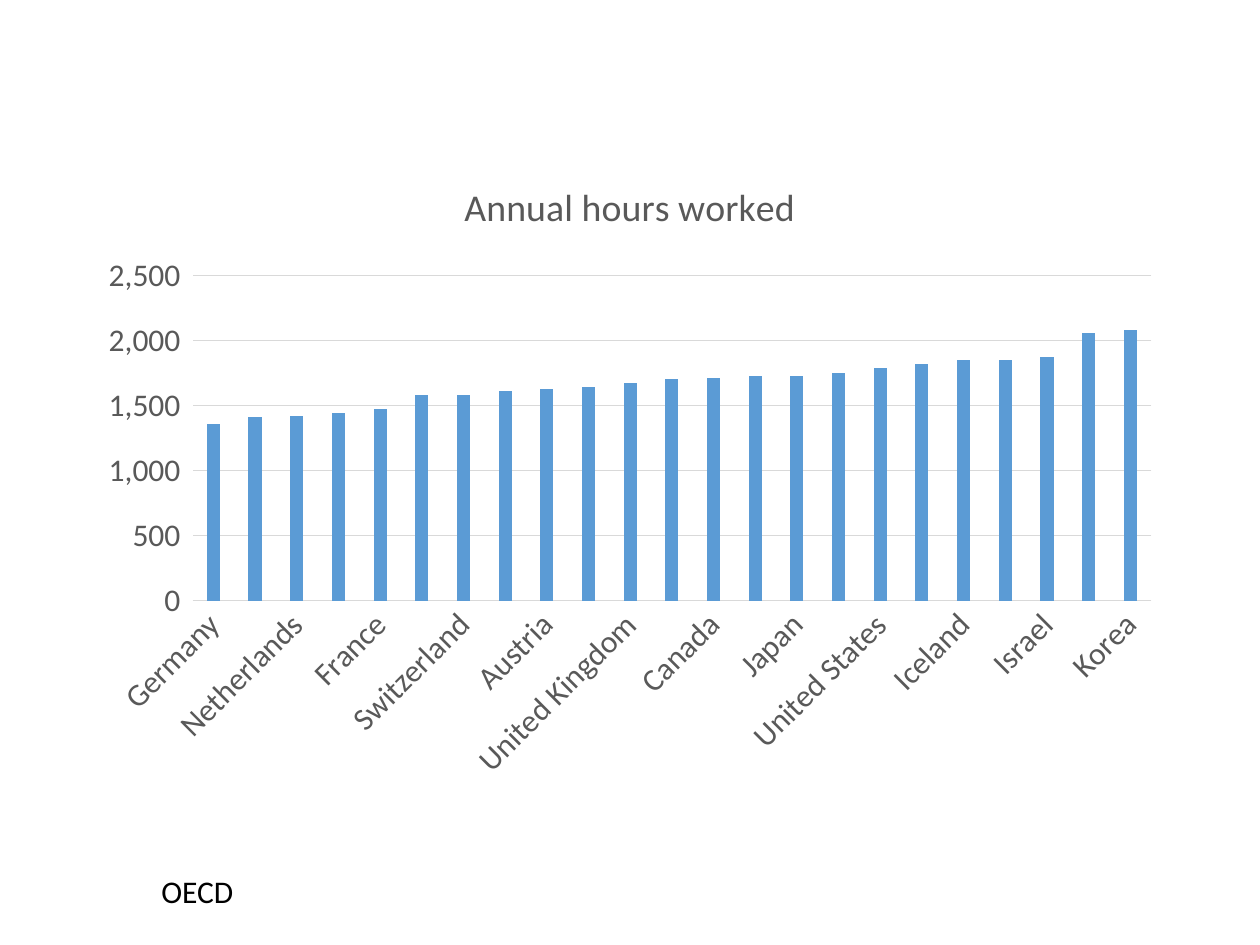
from pptx import Presentation
from pptx.chart.data import CategoryChartData
from pptx.dml.color import RGBColor
from pptx.enum.chart import XL_CHART_TYPE, XL_TICK_MARK
from pptx.enum.text import MSO_AUTO_SIZE
from pptx.util import Emu, Pt

BLACK = RGBColor(0x00, 0x00, 0x00)
GRAY = RGBColor(0x59, 0x59, 0x59)
RULE = RGBColor(0xD9, 0xD9, 0xD9)
BLUE = RGBColor(0x5B, 0x9B, 0xD5)
FACE = "Calibri"
HOURS = {
    "Germany": 1360, "Norway": 1410, "Netherlands": 1420, "Denmark": 1440,
    "France": 1470, "Belgium": 1580, "Switzerland": 1580, "Sweden": 1610,
    "Austria": 1630, "Finland": 1640, "United Kingdom": 1670, "Spain": 1700,
    "Canada": 1710, "Italy": 1730, "Japan": 1730, "New Zealand": 1750,
    "United States": 1790, "Ireland": 1820, "Iceland": 1850,
    "Portugal": 1850, "Israel": 1870, "Greece": 2060, "Korea": 2080,
}


def px(*nums):
    """Turn pixels, 126 to the inch, into EMU."""
    return [Emu(round(n * 914400 / 126)) for n in nums]


def style(font, size, color):
    font.name, font.size, font.color.rgb = FACE, Pt(size), color


deck = Presentation()
deck.slide_width, deck.slide_height = px(1260, 945)
slide = deck.slides.add_slide(deck.slide_layouts[6])

# Chart
data = CategoryChartData()
data.categories = list(HOURS)
data.add_series("Series 1", list(HOURS.values()))
chart = slide.shapes.add_chart(
    XL_CHART_TYPE.COLUMN_CLUSTERED, *px(87, 154, 1086, 638), data).chart
style(chart.font, 18, BLACK)
chart.has_legend = False
chart.has_title = True
title = chart.chart_title.text_frame
title.text = "Annual hours worked"
style(title.paragraphs[0].font, 21.6, GRAY)
title.paragraphs[0].font.bold = False

plot = chart.plots[0]
plot.gap_width, plot.overlap = 219, -27
plot.vary_by_categories = False
bars = plot.series[0].format.fill
bars.solid()
bars.fore_color.rgb = BLUE

# Axes
lands, hours = chart.category_axis, chart.value_axis
for axis in (lands, hours):
    axis.major_tick_mark = axis.minor_tick_mark = XL_TICK_MARK.NONE
    style(axis.tick_labels.font, 18, GRAY)
hours.minimum_scale, hours.maximum_scale, hours.major_unit = 0, 2500, 500
hours.tick_labels.number_format = "#,##0_ ;\\-#,##0\\ "
hours.tick_labels.number_format_is_linked = False
hours.format.line.fill.background()
for line in (lands.format.line, hours.major_gridlines.format.line):
    line.color.rgb, line.width = RULE, Pt(0.75)
turn = lands._element.txPr.bodyPr
turn.set("rot", str(-45 * 60000))
turn.set("vert", "horz")

# Source
frame = slide.shapes.add_textbox(*px(149, 866, 98, 50)).text_frame
frame.word_wrap = False
frame.auto_size = MSO_AUTO_SIZE.SHAPE_TO_FIT_TEXT
frame.text = "OECD"
style(frame.paragraphs[0].font, 18, BLACK)

deck.save("out.pptx")
